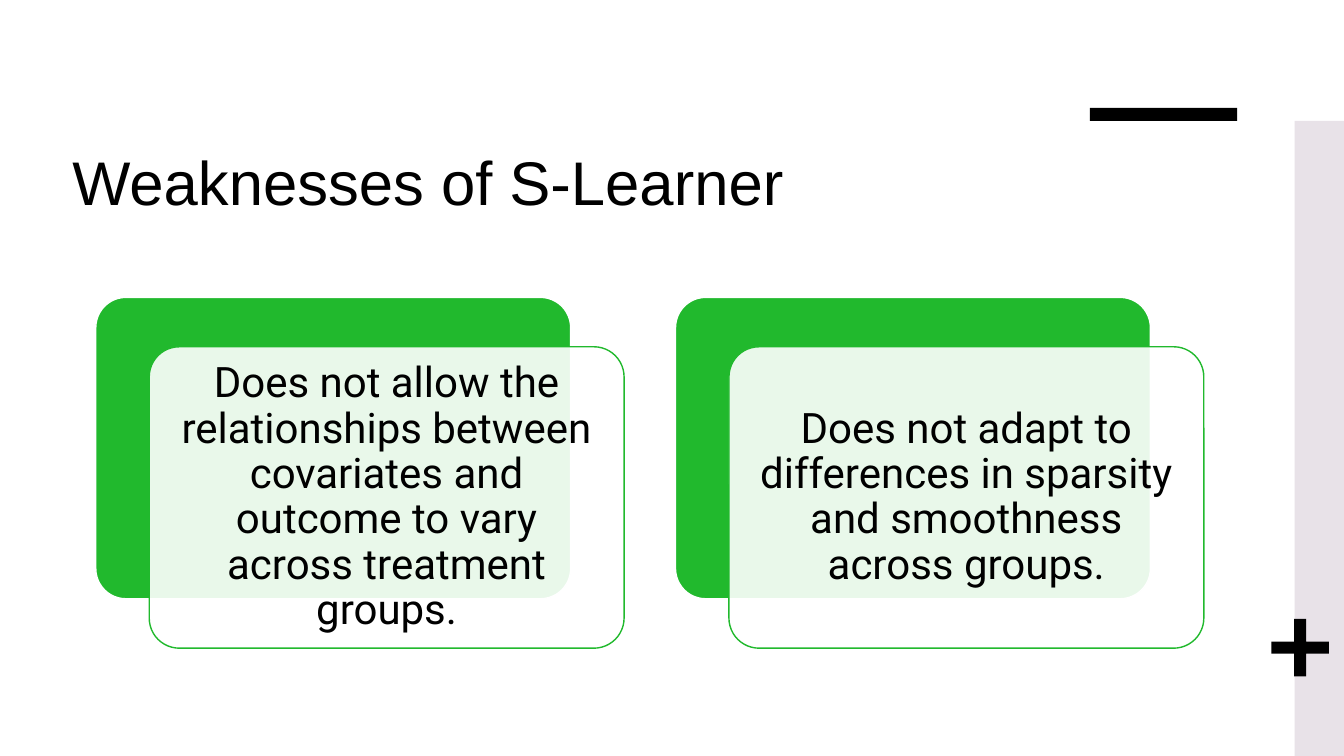
from lxml import etree
from pptx import Presentation
from pptx.dml.color import RGBColor
from pptx.enum import shapes, text
from pptx.oxml.ns import qn
from pptx.util import Inches, Pt

WHITE = RGBColor(0xFF, 0xFF, 0xFF)
BLACK = RGBColor(0, 0, 0)
GREEN = RGBColor(0x21, 0xB9, 0x2D)
LILAC = RGBColor(0xE8, 0xE2, 0xE8)
SHAPE = shapes.MSO_SHAPE

WEAKNESSES = [
    "Does not allow the relationships between covariates and outcome to vary across treatment groups.",
    "Does not adapt to differences in sparsity and smoothness across groups.",
]


def add_block(slide, preset, left, top, width, height, fill, outline=None, adjustment=None):
    block = slide.shapes.add_shape(
        preset, Inches(left), Inches(top), Inches(width), Inches(height))
    block.shadow.inherit = False
    block.fill.solid()
    block.fill.fore_color.rgb = fill
    if outline is None:
        block.line.fill.background()
    else:
        block.line.color.rgb = outline
        block.line.width = Pt(1)
    if adjustment is not None:
        block.adjustments[0] = adjustment
    return block


def set_opacity(block, percent):
    color = block.fill._xPr.find(qn("a:solidFill"))[0]
    etree.SubElement(color, qn("a:alpha")).set("val", str(percent * 1000))


def write(paragraph, wording, font, size):
    paragraph.text = wording
    paragraph.font.name = font
    paragraph.font.size = Pt(size)
    paragraph.font.color.rgb = BLACK


def add_title(slide, left, top, width, height):
    title = slide.shapes.add_textbox(
        Inches(left), Inches(top), Inches(width), Inches(height))
    frame = title.text_frame
    frame.word_wrap = True
    frame.margin_top = Inches(0.11)
    write(frame.paragraphs[0], "Weaknesses of S-Learner", "Arial", 44)


def add_decoration(slide, left, top, width, height):
    add_block(slide, SHAPE.RECTANGLE, left, top, width, height, LILAC)
    add_block(slide, SHAPE.RECTANGLE, left - 2.03, top - 0.13, 1.46, 0.13, BLACK)
    add_block(slide, SHAPE.CROSS, left - 0.23, top + 4.94, 0.57, 0.57, BLACK,
              adjustment=0.395)


def add_weakness(slide, wording, left, top, width, height):
    add_block(slide, SHAPE.ROUNDED_RECTANGLE, left, top, width, height,
              GREEN, WHITE, 0.1)
    card = add_block(slide, SHAPE.ROUNDED_RECTANGLE, left + 0.53, top + 0.49,
                     width, height, WHITE, GREEN, 0.1)
    set_opacity(card, 90)
    frame = card.text_frame
    frame.word_wrap = True
    frame.vertical_anchor = text.MSO_ANCHOR.MIDDLE
    frame.margin_left = frame.margin_right = Inches(0.21)
    frame.margin_top = frame.margin_bottom = Inches(0.21)
    paragraph = frame.paragraphs[0]
    paragraph.alignment = text.PP_ALIGN.CENTER
    paragraph.line_spacing = 0.9
    write(paragraph, wording, "Roboto", 30)


def add_weaknesses(slide, left, top, width, height, pitch):
    for column, wording in enumerate(WEAKNESSES):
        add_weakness(slide, wording, left + column * pitch, top, width, height)


def main():
    deck = Presentation()
    deck.slide_width = Inches(13.33)
    deck.slide_height = Inches(7.5)
    slide = deck.slides.add_slide(deck.slide_layouts[6])
    slide.background.fill.solid()
    slide.background.fill.fore_color.rgb = WHITE
    add_title(slide, 0.62, 1.32, 9.04, 1.58)
    add_decoration(slide, 12.84, 1.2, 0.49, 6.3)
    add_weaknesses(slide, 0.95, 2.95, 4.71, 2.99, 5.75)
    deck.save("out.pptx")


if __name__ == "__main__":
    main()
